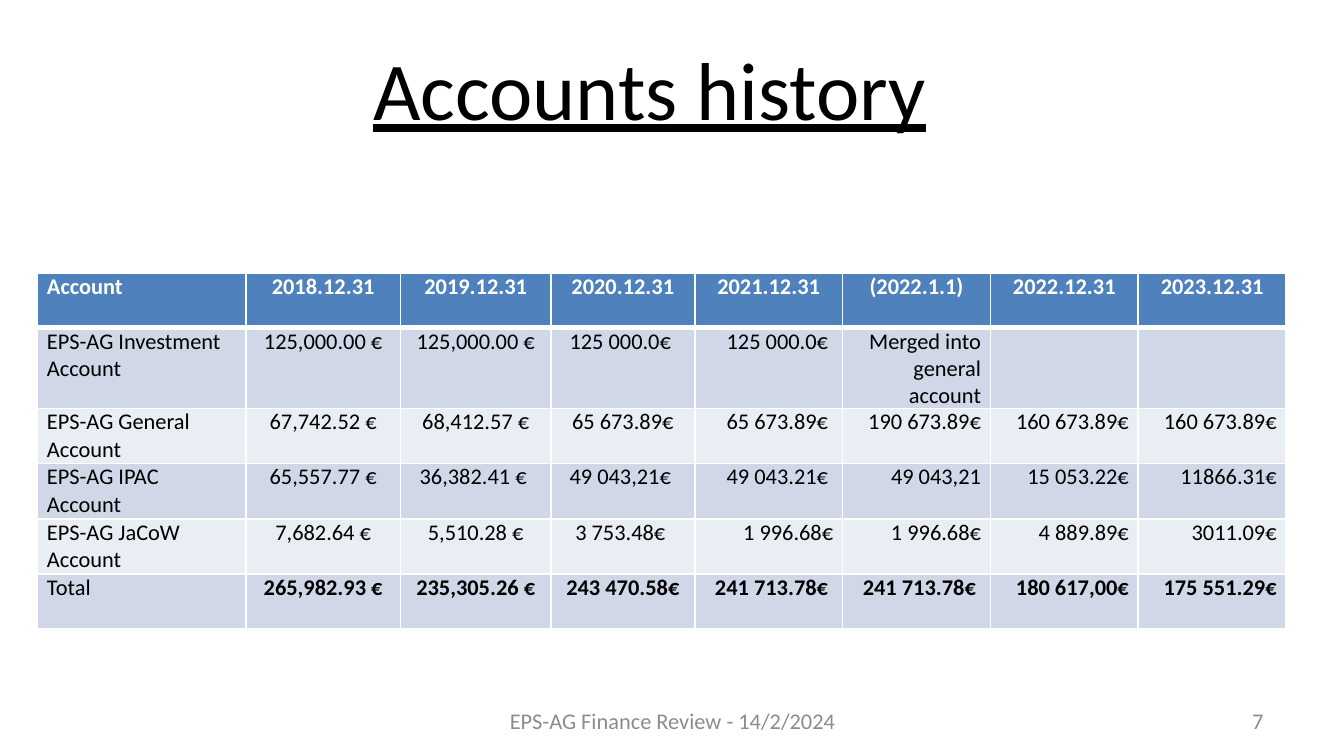
from lxml import etree
from pptx import Presentation
from pptx.dml.color import RGBColor
from pptx.enum import text
from pptx.oxml import ns
from pptx.util import Inches, Pt

BLACK = RGBColor(0x00, 0x00, 0x00)
WHITE = RGBColor(0xFF, 0xFF, 0xFF)
GREY = RGBColor(0x8C, 0x8C, 0x8C)
HEADER_BLUE = RGBColor(0x4F, 0x81, 0xBD)
BANDS = RGBColor(0xD0, 0xD8, 0xE8), RGBColor(0xE9, 0xED, 0xF4)

LEFT = text.PP_ALIGN.LEFT
CENTER = text.PP_ALIGN.CENTER
RIGHT = text.PP_ALIGN.RIGHT

COLUMN_WIDTHS = [1.55, 1.15, 1.12, 1.07, 1.1, 1.1, 1.1, 1.1]
ROW_HEIGHT = 0.41
HEADER_ALIGNS = [LEFT] + [CENTER] * 7
BODY_ALIGNS = [LEFT] + [CENTER] * 3 + [RIGHT] * 4

ACCOUNTS = [
    ["Account", "2018.12.31", "2019.12.31", "2020.12.31", "2021.12.31",
     "(2022.1.1)", "2022.12.31", "2023.12.31"],
    ["EPS-AG Investment Account", "125,000.00 €", "125,000.00 €", "125 000.0€ ",
     "125 000.0€ ", "Merged into general account", "", ""],
    ["EPS-AG General Account", "67,742.52 €", "68,412.57 €", "65 673.89€",
     "65 673.89€ ", "190 673.89€", "160 673.89€", "160 673.89€"],
    ["EPS-AG IPAC Account", "65,557.77 €", "36,382.41 € ", "49 043,21€ ",
     "49 043.21€ ", "49 043,21", "15 053.22€", "11866.31€"],
    ["EPS-AG JaCoW Account", "7,682.64 €", "5,510.28 €", "3 753.48€ ",
     "1 996.68€", "1 996.68€", " 4 889.89€", "3011.09€"],
    ["Total", "265,982.93 €", "235,305.26 €", "243 470.58€",
     "241 713.78€ ", "241 713.78€ ", "180 617,00€", "175 551.29€"],
]


class SlideBuilder:
    font_name = "Calibri"

    def __init__(self, slide):
        self.s = slide

    def style(self, p, size, color, align, bold=False, underline=False):
        p.alignment = align
        font = p.font
        font.name = self.font_name
        font.size = Pt(size)
        font.bold = bold
        font.underline = underline
        font.color.rgb = color

    def text_box(self, words, x, y, w, h, size, color, align, underline=False):
        box = self.s.shapes.add_textbox(Inches(x), Inches(y), Inches(w), Inches(h))
        tf = box.text_frame
        tf.word_wrap = True
        tf.vertical_anchor = text.MSO_ANCHOR.MIDDLE
        p = tf.paragraphs[0]
        p.text = words
        self.style(p, size, color, align, underline=underline)
        return p

    def borders(self, cell, top, bottom):
        """Draw white cell edges; top and bottom are widths in points."""
        tc_pr = cell._tc.get_or_add_tcPr()
        edges = {"lnL": 1, "lnR": 1, "lnT": top, "lnB": bottom}
        for i, (edge, width) in enumerate(edges.items()):
            ln = etree.Element(ns.qn(f"a:{edge}"), w=str(Pt(width)))
            fill = etree.SubElement(ln, ns.qn("a:solidFill"))
            etree.SubElement(fill, ns.qn("a:srgbClr"), val=str(WHITE))
            tc_pr.insert(i, ln)

    def cell(self, cell, words, fill, color, align, bold):
        cell.margin_left = cell.margin_right = Inches(0.07)
        cell.margin_top = cell.margin_bottom = 0
        cell.fill.solid()
        cell.fill.fore_color.rgb = fill
        p = cell.text_frame.paragraphs[0]
        p.text = words
        self.style(p, 12, color, align, bold)

    def table(self, rows, x, y):
        frame = self.s.shapes.add_table(
            len(rows), len(COLUMN_WIDTHS), Inches(x), Inches(y),
            Inches(sum(COLUMN_WIDTHS)), Inches(ROW_HEIGHT * len(rows)))
        table = frame.table
        for column, width in zip(table.columns, COLUMN_WIDTHS):
            column.width = Inches(width)
        last = len(rows) - 1
        for i, row in enumerate(rows):
            table.rows[i].height = Inches(ROW_HEIGHT)
            header = i == 0
            fill = HEADER_BLUE if header else BANDS[(i - 1) % 2]
            color = WHITE if header else BLACK
            aligns = HEADER_ALIGNS if header else BODY_ALIGNS
            for j, (words, align) in enumerate(zip(row, aligns)):
                cell = table.cell(i, j)
                bold = header or (i == last and j > 0)
                self.cell(cell, words, fill, color, align, bold)
                self.borders(cell, 3 if i == 1 else 1, 3 if header else 1)


def main():
    prs = Presentation()
    prs.slide_width = Inches(10)
    prs.slide_height = prs.slide_width * 9 // 16
    page = SlideBuilder(prs.slides.add_slide(prs.slide_layouts[6]))

    title = page.text_box("Accounts history", 0.78, 0.15, 8.11, 1.09,
                          44, BLACK, CENTER, underline=True)
    title.line_spacing = 0.9
    page.table(ACCOUNTS, 0.28, 2.03)
    page.text_box("EPS-AG Finance Review - 14/2/2024", 3.42, 5.21, 3.17, 0.3,
                  12, GREY, CENTER)
    page.text_box("7", 7.17, 5.21, 2.33, 0.3, 12, GREY, RIGHT)

    prs.save("out.pptx")


if __name__ == "__main__":
    main()
